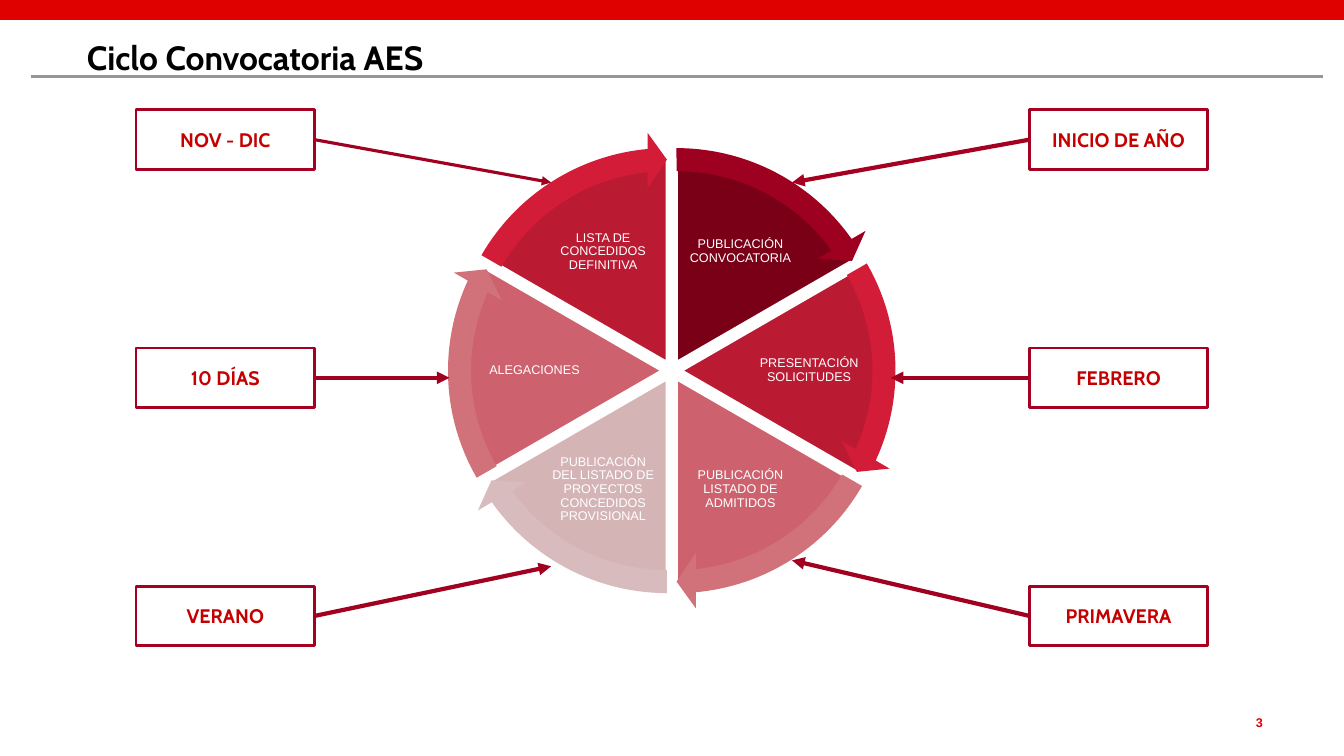
"""Build the slide with the yearly cycle of the AES call."""
from dataclasses import dataclass
from math import cos, radians, sin

from lxml.etree import SubElement
from pptx import Presentation
from pptx.dml.color import RGBColor
from pptx.enum.shapes import MSO_CONNECTOR, MSO_SHAPE
from pptx.enum.text import MSO_ANCHOR, MSO_AUTO_SIZE, PP_ALIGN
from pptx.oxml.ns import qn
from pptx.util import Cm, Pt


@dataclass(frozen=True)
class Theme:
    """Colours, fonts and type sizes."""
    head: str = "Cabin"
    body: str = "Arial"
    title: int = 24
    label: int = 14
    small: int = 9
    ink: str = "010000"
    white: str = "FFFFFF"
    bar: str = "DF0000"
    rule: str = "969696"
    text: str = "C40000"
    edge: str = "A50021"
    arrow: str = "A10020"


THEME = Theme()
TITLE = "Ciclo Convocatoria AES"
NUMBER = "3"
STEPS = [
    ("PUBLICACIÓN CONVOCATORIA", "7A0018", "9E0020"),
    ("PRESENTACIÓN SOLICITUDES", "BB1A33", "D31D38"),
    ("PUBLICACIÓN LISTADO DE ADMITIDOS", "CD626E", "D1717A"),
    ("PUBLICACIÓN DEL LISTADO DE PROYECTOS CONCEDIDOS PROVISIONAL",
     "D5B4B6", "D8BCBD"),
    ("ALEGACIONES", "CD626E", "D1717A"),
    ("LISTA DE CONCEDIDOS DEFINITIVA", "BB1A33", "D31D38"),
]
DATES = [
    ("INICIO DE AÑO", 1, 0, (19.96, 4.6), THEME.edge, 3),
    ("FEBRERO", 1, 1, (22.45, 9.52), THEME.arrow, 3),
    ("PRIMAVERA", 1, 2, (19.96, 14.12), THEME.arrow, 3),
    ("NOV - DIC", 0, 0, (13.89, 4.6), THEME.arrow, 2.25),
    ("10 DÍAS", 0, 1, (11.33, 9.52), THEME.arrow, 3),
    ("VERANO", 0, 2, (13.89, 14.27), THEME.arrow, 3),
]
WIDE, HIGH = 33.87, 19.05
MID = (16.93, 9.34)
GAP, REACH = 0.24, 3.46
PIE, RING = 10.31, 11.61
TURN, FULL, START = 36, 216, 162
BOX = (4.5, 1.5)
EDGE, TOP, STEP = 3.43, 2.77, 6


def put(item, **values):
    for name, value in values.items():
        setattr(item, name, value)


def rgb(code):
    return RGBColor.from_string(code)


def write(shape, text, face, size, color, bold=True,
          align=PP_ALIGN.CENTER, inset=None, space=None):
    frame = shape.text_frame
    put(frame, text=text, word_wrap=True, auto_size=MSO_AUTO_SIZE.NONE,
        vertical_anchor=MSO_ANCHOR.MIDDLE)
    if inset is not None:
        for side in ("left", "right", "top", "bottom"):
            put(frame, **{f"margin_{side}": Cm(inset)})
    line = frame.paragraphs[0]
    put(line, alignment=align, line_spacing=space)
    put(line.font, name=face, size=Pt(size), bold=bold)
    line.font.color.rgb = rgb(color)


def draw(slide, kind, spot, fill, edge=None, turns=()):
    shape = slide.shapes.add_shape(kind, *map(Cm, spot))
    shape.shadow.inherit = False
    shape.fill.solid()
    shape.fill.fore_color.rgb = rgb(fill)
    if edge:
        shape.line.color.rgb = rgb(edge)
        shape.line.width = Pt(2)
    else:
        shape.line.fill.background()
    for index, turn in enumerate(turns):
        shape.adjustments[index] = turn
    return shape


def link(slide, start, end, color, width, head=False):
    line = slide.shapes.add_connector(
        MSO_CONNECTOR.STRAIGHT, *map(Cm, (*start, *end)))
    line.line.color.rgb = rgb(color)
    line.line.width = Pt(width)
    props = line.element.spPr
    if head:
        SubElement(props.find(qn("a:ln")), qn("a:tailEnd"), type="triangle")
    SubElement(props, qn("a:effectLst"))
    return line


def around(index, far, wide, high):
    angle = radians(60 * index - 60)
    return (MID[0] + far * cos(angle) - wide / 2,
            MID[1] + far * sin(angle) - high / 2, wide, high)


def frame(slide):
    draw(slide, MSO_SHAPE.RECTANGLE, (0, 0, WIDE, 0.5), THEME.bar)
    link(slide, (0.78, 1.93), (33.35, 1.93), THEME.rule, 2.25)
    title = slide.shapes.title
    put(title, left=Cm(2.06), top=Cm(0.74), width=Cm(32.77), height=Cm(1.4))
    write(title, TITLE, THEME.head, THEME.title, THEME.ink,
          align=PP_ALIGN.LEFT, inset=0.13)
    number = slide.shapes.add_textbox(*map(Cm, (28.63, 18.01, 3.2, 0.38)))
    write(number, NUMBER, THEME.body, THEME.small, THEME.bar,
          align=PP_ALIGN.RIGHT, inset=0)


def wheel(slide):
    for index, (text, fill, _) in enumerate(STEPS):
        start = (START + TURN * index) % FULL
        draw(slide, MSO_SHAPE.PIE, around(index, GAP, PIE, PIE), fill,
             THEME.white, (start, (start + TURN) % FULL))
        label = slide.shapes.add_textbox(
            *map(Cm, around(index, REACH, 2.7, 2.08)))
        write(label, text, THEME.body, THEME.small, THEME.white,
              bold=False, inset=0.03, space=0.9)
    for index, (_, _, fill) in enumerate(STEPS):
        start = (START + TURN * index) % FULL
        draw(slide, MSO_SHAPE.CIRCULAR_ARROW,
             around(index, GAP, RING, RING), fill,
             turns=(0.05, 3.27, (start + 32.72) % FULL, start, 0.06))


def dates(slide):
    for text, right, row, tip, color, width in DATES:
        left = WIDE - EDGE - BOX[0] if right else EDGE
        spot = (left, TOP + STEP * row)
        box = draw(slide, MSO_SHAPE.FLOWCHART_PROCESS, (*spot, *BOX),
                   THEME.white, THEME.edge)
        write(box, text, THEME.head, THEME.label, THEME.text)
        line = link(slide, spot, tip, color, width, head=True)
        line.begin_connect(box, 1 if right else 3)


def main():
    deck = Presentation()
    put(deck, slide_width=Cm(WIDE), slide_height=Cm(HIGH))
    slide = deck.slides.add_slide(deck.slide_layouts[5])
    for part in (frame, wheel, dates):
        part(slide)
    deck.save("out.pptx")


if __name__ == "__main__":
    main()
